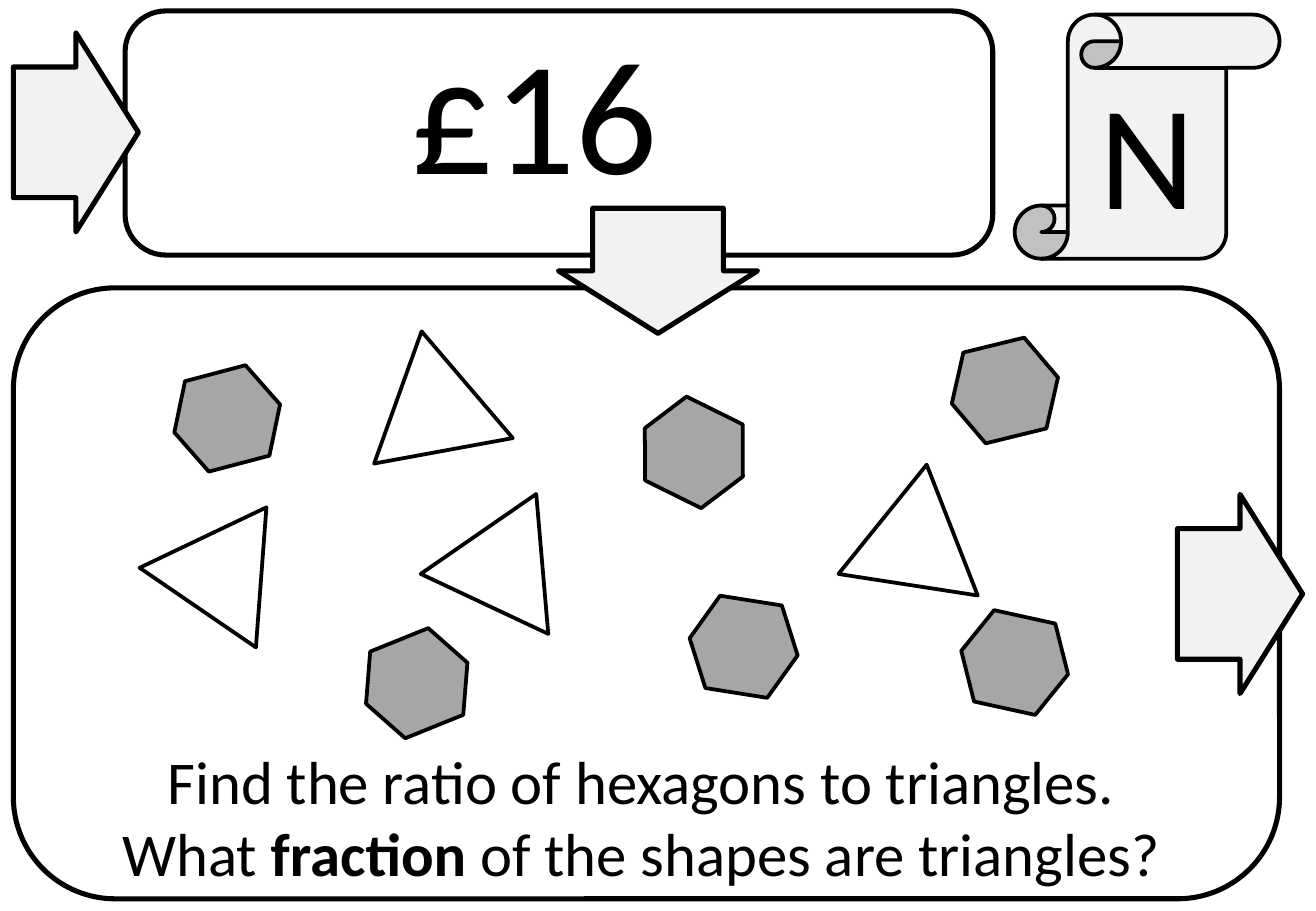
import pptx
import pptx.dml.color
import pptx.enum.shapes
import pptx.enum.text
import pptx.util

Inches = pptx.util.Inches
RGBColor = pptx.dml.color.RGBColor
SHAPES = pptx.enum.shapes.MSO_SHAPE
ALIGN = pptx.enum.text.PP_ALIGN

BLACK = RGBColor(0x00, 0x00, 0x00)
PALE_GREY = RGBColor(0xF2, 0xF2, 0xF2)
MID_GREY = RGBColor(0xA6, 0xA6, 0xA6)

ARROW_SIZE = (1.03, 1.64)
HEXAGON_SIZE = (0.9, 0.77)
TRIANGLE_SIZE = (1.16, 1)

PANELS = [(0.11, 2.37, 10.42, 5.03), (1.03, 0.09, 7.14, 2.01)]
ARROWS = [(9.69, 4.07, 0), (4.9, 1.41, 90), (0.11, 0.27, 0)]
HEXAGONS = [
    (1.42, 3.06, 345.2),
    (2.98, 5.24, 338),
    (5.26, 3.34, 26.3),
    (7.9, 5.07, 12.4),
    (7.82, 2.83, 346.2),
    (5.67, 4.94, 9),
]
TRIANGLES = [
    (2.98, 2.72, 349.6),
    (1.33, 4.09, 34.4),
    (3.62, 4.02, 25.2),
    (6.97, 3.82, 8.8),
]
QUESTION = [
    [("Find the ratio of hexagons to triangles.", False)],
    [("What ", False), ("fraction", True), (" of the shapes are triangles?", False)],
]


class LoopCard:
    font_name = "Calibri"
    line_color = BLACK

    def __init__(self, slide):
        self.slide = slide

    def outline(self, kind, box, fill=None, line_width=2.25, rotation=0, adjustments=()):
        shape = self.slide.shapes.add_shape(kind, *map(Inches, box))
        shape.shadow.inherit = False
        shape.rotation = rotation
        for index, value in enumerate(adjustments):
            shape.adjustments[index] = value
        if fill is None:
            shape.fill.background()
        else:
            shape.fill.solid()
            shape.fill.fore_color.rgb = fill
        shape.line.color.rgb = self.line_color
        shape.line.width = pptx.util.Pt(line_width)
        return shape

    def add_lines(self, frame, lines, size, alignment):
        for index, line in enumerate(lines):
            paragraph = frame.add_paragraph() if index else frame.paragraphs[0]
            paragraph.alignment = alignment
            for text, bold in line:
                run = paragraph.add_run()
                run.text = text
                run.font.color.rgb = BLACK
                font_format = {
                    "name": self.font_name,
                    "size": pptx.util.Pt(size),
                    "bold": bold,
                }
                for name, value in font_format.items():
                    setattr(run.font, name, value)

    def text(self, box, lines, size, alignment):
        frame = self.slide.shapes.add_textbox(*map(Inches, box)).text_frame
        frame_format = {
            "word_wrap": False,
            "auto_size": pptx.enum.text.MSO_AUTO_SIZE.SHAPE_TO_FIT_TEXT,
        }
        for name, value in frame_format.items():
            setattr(frame, name, value)
        self.add_lines(frame, lines, size, alignment)

    def scroll(self, box, letter):
        shape = self.outline(SHAPES.VERTICAL_SCROLL, box, PALE_GREY, adjustments=(0.218,))
        shape.text_frame.vertical_anchor = pptx.enum.text.MSO_ANCHOR.MIDDLE
        self.add_lines(shape.text_frame, [[(letter, False)]], 88, ALIGN.CENTER)


def main():
    presentation = pptx.Presentation()
    presentation.slide_width = Inches(10.83)
    presentation.slide_height = Inches(7.5)
    card = LoopCard(presentation.slides.add_slide(presentation.slide_layouts[6]))

    for box in PANELS:
        card.outline(SHAPES.ROUNDED_RECTANGLE, box, line_width=3)
    for left, top, rotation in ARROWS:
        card.outline(
            SHAPES.RIGHT_ARROW, (left, top, *ARROW_SIZE), PALE_GREY, 3, rotation, (0.656, 0.5)
        )
    card.scroll((8.35, 0.12, 2.18, 2.01), "N")
    card.text((3.29, 0.05, 2.25, 1.72), [[("£16", False)]], 96, ALIGN.LEFT)
    card.text((0.82, 6.07, 8.91, 1.31), QUESTION, 36, ALIGN.CENTER)
    for left, top, rotation in HEXAGONS:
        card.outline(SHAPES.HEXAGON, (left, top, *HEXAGON_SIZE), MID_GREY, rotation=rotation)
    for left, top, rotation in TRIANGLES:
        card.outline(
            SHAPES.ISOSCELES_TRIANGLE, (left, top, *TRIANGLE_SIZE), rotation=rotation
        )
    presentation.save("out.pptx")


if __name__ == "__main__":
    main()
